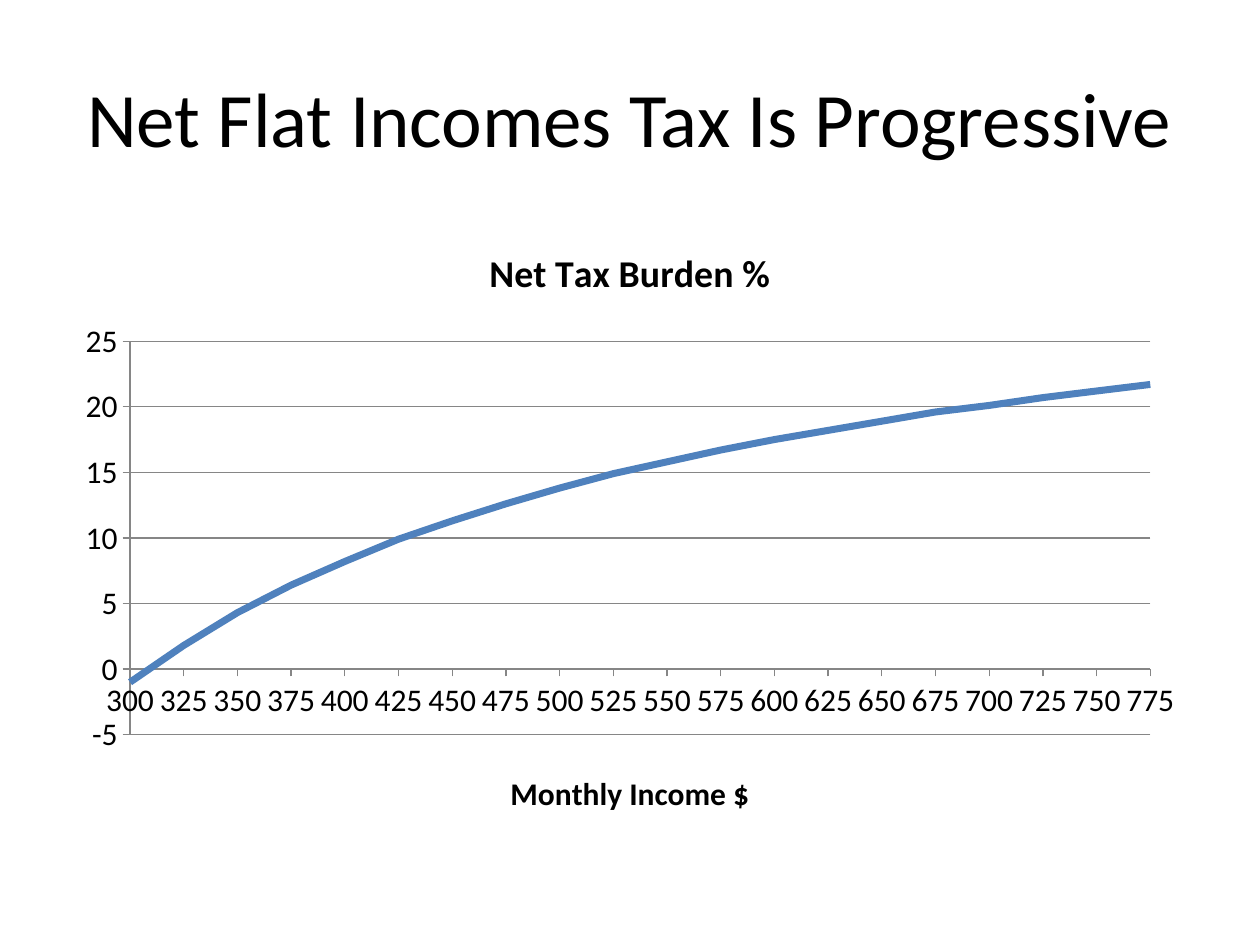
import pptx
import pptx.chart.data
import pptx.dml.color
import pptx.enum.chart
import pptx.enum.text
import pptx.oxml
import pptx.oxml.ns
import pptx.util

HEAD = "Net Flat Incomes Tax Is Progressive"
TITLE = "Net Tax Burden %"
AXIS = "Monthly Income $"
INCOMES = [str(pay) for pay in range(300, 800, 25)]
BURDEN = [-1, 1.8, 4.3, 6.4, 8.2, 9.9, 11.3, 12.6, 13.8, 14.9,
          15.8, 16.7, 17.5, 18.2, 18.9, 19.6, 20.1, 20.7, 21.2, 21.7]
COLORS = {"text": "000000", "line": "4F81BD", "grid": "868686"}
FACE = "Calibri"
WIDE, HIGH = 10, 7.5
BOXES = {"head": (0.05, 0.04, 0.9, 1 / 6), "chart": (0.05, 0.7 / 3, 0.9, 0.66)}


def place(name):
    return [pptx.util.Inches(part * size)
            for part, size in zip(BOXES[name], (WIDE, HIGH, WIDE, HIGH))]


def color(name):
    return pptx.dml.color.RGBColor.from_string(COLORS[name])


def style(font, size, bold=False):
    font.name = FACE
    font.size = pptx.util.Pt(size)
    font.bold = bold
    font.color.rgb = color("text")


def stroke(line, name, width):
    line.color.rgb = color(name)
    line.width = pptx.util.Pt(width)


def label(owner, text, size):
    frame = owner.text_frame
    frame.text = text
    style(frame.paragraphs[0].font, size, True)


def add_head(slide):
    frame = slide.shapes.add_textbox(*place("head")).text_frame
    frame.word_wrap = True
    frame.vertical_anchor = pptx.enum.text.MSO_ANCHOR.MIDDLE
    para = frame.paragraphs[0]
    para.text = HEAD
    para.alignment = pptx.enum.text.PP_ALIGN.CENTER
    style(para.font, 44)


def add_curve(slide):
    data = pptx.chart.data.CategoryChartData()
    data.categories = INCOMES
    data.add_series(TITLE, BURDEN)
    kind = pptx.enum.chart.XL_CHART_TYPE.LINE
    chart = slide.shapes.add_chart(kind, *place("chart"), data).chart
    style(chart.font, 18)
    chart.has_legend = False
    chart.has_title = True
    label(chart.chart_title, TITLE, 21.6)
    chart.chart_title.include_in_layout = False

    series = chart.plots[0].series[0]
    series.smooth = False
    series.marker.style = pptx.enum.chart.XL_MARKER_STYLE.NONE
    stroke(series.format.line, "line", 4)

    across, up = chart.category_axis, chart.value_axis
    for axis in (across, up):
        axis.major_tick_mark = pptx.enum.chart.XL_TICK_MARK.OUTSIDE
        axis.minor_tick_mark = pptx.enum.chart.XL_TICK_MARK.NONE
        stroke(axis.format.line, "grid", 0.75)
    across.has_major_gridlines = False
    across.has_title = True
    label(across.axis_title, AXIS, 18)

    up.has_major_gridlines = True
    stroke(up.major_gridlines.format.line, "grid", 0.75)
    up.minimum_scale, up.maximum_scale = -5, 25
    root = chart.element
    for old in root.xpath(".//c:valAx/c:crossBetween"):
        old.getparent().remove(old)
    cross = pptx.oxml.parse_xml(
        "<c:crossBetween %s val='midCat'/>" % pptx.oxml.ns.nsdecls("c"))
    root.xpath(".//c:valAx/c:crosses")[0].addnext(cross)
    up.major_unit = 5


def main():
    deck = pptx.Presentation()
    deck.slide_width = pptx.util.Inches(WIDE)
    deck.slide_height = pptx.util.Inches(HIGH)
    slide = deck.slides.add_slide(deck.slide_layouts[6])
    add_head(slide)
    add_curve(slide)
    deck.save("out.pptx")


if __name__ == "__main__":
    main()
